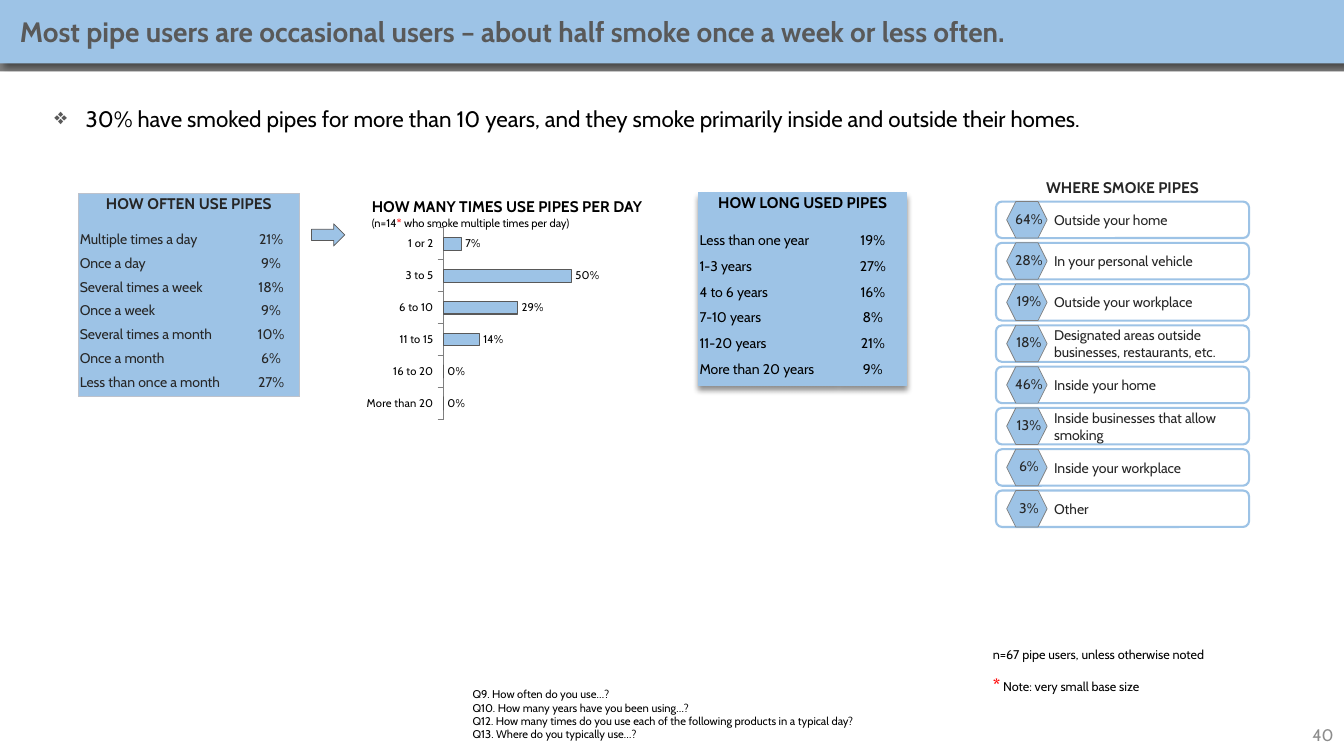
"""Build the slide on how often, how long and where pipe users smoke."""
import pptx
import pptx.chart.data
import pptx.dml.color
import pptx.enum.chart
import pptx.enum.shapes
import pptx.enum.text
import pptx.oxml
import pptx.oxml.ns
import pptx.util

Cm, Pt = pptx.util.Cm, pptx.util.Pt
RGBColor = pptx.dml.color.RGBColor
SHAPE = pptx.enum.shapes.MSO_SHAPE
ALIGN = pptx.enum.text.PP_ALIGN
ANCHOR = pptx.enum.text.MSO_ANCHOR

BLUE = RGBColor(0x9D, 0xC3, 0xE6)
BLACK = RGBColor(0, 0, 0)
WHITE = RGBColor(255, 255, 255)
RED = RGBColor(255, 0, 0)
INK = RGBColor(0x26, 0x26, 0x26)
SLATE = RGBColor(0x59, 0x59, 0x59)
GRAY = RGBColor(0x80, 0x80, 0x80)
LIGHT = RGBColor(0x8C, 0x8C, 0x8C)
AXIS = RGBColor(0x7F, 0x7F, 0x7F)
BORDER = RGBColor(0xBD, 0xC2, 0xCC)
NO_GRID = "{2D5ABB26-0587-4C30-8999-92F81FD0307C}"


def element(xml):
    tag, rest = xml[1:].split(">", 1)
    return pptx.oxml.parse_xml(f"<{tag} {pptx.oxml.ns.nsdecls('a', 'c')}>{rest}")


def shadow(angle):
    return element(
        '<a:effectLst><a:outerShdw blurRad="50800" dist="38100" '
        f'dir="{angle * 60000}" algn="t" rotWithShape="0"><a:srgbClr val="000000">'
        '<a:alpha val="43000"/></a:srgbClr></a:outerShdw></a:effectLst>')


class Deck:
    """Holds the font and the current slide and draws elements in cm."""

    def __init__(self, font):
        self.font = font
        self.prs = pptx.Presentation()
        self.prs.slide_width, self.prs.slide_height = Cm(33.87), Cm(19.05)
        self.s = self.prs.slides.add_slide(self.prs.slide_layouts[6])

    def fill_text(self, tf, paragraphs, size, color, bold=False, align=ALIGN.LEFT):
        for i, parts in enumerate(paragraphs):
            p = tf.paragraphs[0] if i == 0 else tf.add_paragraph()
            p.alignment = align
            if isinstance(parts, str):
                parts = [(parts, size, color, bold)]
            for text, run_size, run_color, run_bold in parts:
                r = p.add_run()
                r.text = text
                r.font.name, r.font.size = self.font, Pt(run_size)
                r.font.bold, r.font.color.rgb = run_bold, run_color

    def text(self, box, paragraphs, size, color=BLACK, bold=False,
             align=ALIGN.LEFT, anchor=ANCHOR.TOP):
        sp = self.s.shapes.add_textbox(*map(Cm, box))
        tf = sp.text_frame
        tf.word_wrap, tf.vertical_anchor = True, anchor
        self.fill_text(tf, paragraphs, size, color, bold, align)
        return sp

    def bullet(self, box, text, size):
        p = self.text(box, [text], size).text_frame.paragraphs[0]
        pPr = p._p.get_or_add_pPr()
        pPr.set("marL", str(Cm(0.79)))
        pPr.set("indent", str(Cm(-0.79)))
        pPr.append(element(f'<a:buClr><a:srgbClr val="{SLATE}"/></a:buClr>'))
        pPr.append(element('<a:buChar char="❖"></a:buChar>'))

    def shape(self, kind, box, fill, line=None, width=0.5):
        sp = self.s.shapes.add_shape(kind, *map(Cm, box))
        sp.shadow.inherit = False
        sp.fill.solid()
        sp.fill.fore_color.rgb = fill
        if line is None:
            sp.line.fill.background()
        else:
            sp.line.color.rgb, sp.line.width = line, Pt(width)
        return sp

    def table(self, left, top, widths, heights, title, rows, color, edge=None):
        head, body = heights
        table = self.s.shapes.add_table(
            len(rows) + 1, 2, Cm(left), Cm(top), Cm(sum(widths)),
            Cm(head + body * len(rows))).table
        table.first_row = table.horz_banding = False
        table._tbl.tblPr.find(pptx.oxml.ns.qn("a:tableStyleId")).text = NO_GRID
        for column, width in zip(table.columns, widths):
            column.width = Cm(width)
        for i, row in enumerate([(title, "")] + rows):
            table.rows[i].height = Cm(body if i else head)
            for j, value in enumerate(row):
                cell = table.cell(i, j)
                cell.margin_left = cell.margin_right = cell.margin_top = Cm(0.03)
                cell.margin_bottom = 0
                align = ALIGN.CENTER if j or not i else ALIGN.LEFT
                if value:
                    self.fill_text(cell.text_frame, [value], 10 if i else 11,
                                   color, not i, align)
                if edge is not None:
                    sides = {"L": j == 0, "R": j == 1 or i == 0,
                             "T": i == 0, "B": i == len(rows)}
                    for side in (k for k, on in sides.items() if on):
                        cell._tc.get_or_add_tcPr().append(element(
                            f'<a:ln{side} w="{Pt(0.5)}"><a:solidFill>'
                            f'<a:srgbClr val="{edge}"/></a:solidFill></a:ln{side}>'))
                cell.fill.solid()
                cell.fill.fore_color.rgb = BLUE
        table.cell(0, 0).merge(table.cell(0, 1))
        return table

    def bar_chart(self, box, categories, values):
        data = pptx.chart.data.CategoryChartData(number_format="0%")
        data.categories = categories
        data.add_series("Series 1", values)
        chart = self.s.shapes.add_chart(
            pptx.enum.chart.XL_CHART_TYPE.BAR_CLUSTERED, *map(Cm, box), data).chart
        chart.has_legend = chart.has_title = False
        chart.font.name, chart.font.size = self.font, Pt(8)
        chart.font.color.rgb = BLACK
        chart.category_axis.format.line.color.rgb = AXIS
        scale = chart.value_axis
        scale.visible = scale.has_major_gridlines = False
        scale.minimum_scale, scale.maximum_scale = 0, 0.6
        plot = chart.plots[0]
        plot.gap_width, plot.vary_by_categories = 150, False
        bars = plot.series[0].format
        bars.fill.solid()
        bars.fill.fore_color.rgb = BLUE
        bars.line.color.rgb, bars.line.width = SLATE, Pt(0.75)
        plot.has_data_labels = True
        labels = plot.data_labels
        labels.show_value, labels.font.size = True, Pt(8)
        labels.number_format, labels.number_format_is_linked = "0%", False
        labels.position = pptx.enum.chart.XL_LABEL_POSITION.OUTSIDE_END
        area = chart._chartSpace.chart.plotArea
        for old in area.findall(pptx.oxml.ns.qn("c:layout")):
            area.remove(old)
        sizes = "".join(f'<c:{k} val="{v}"/>' for k, v in
                        zip("xywh", (0.34, 0.02, 0.64, 0.96)))
        area.insert(0, element(
            '<c:layout><c:manualLayout><c:layoutTarget val="inner"/>'
            '<c:xMode val="edge"/><c:yMode val="edge"/>'
            f'{sizes}</c:manualLayout></c:layout>'))

    def place(self, top, percent, lines):
        sp = self.shape(SHAPE.ROUNDED_RECTANGLE, (25.1, top, 6.38, 0.92),
                        WHITE, BLUE, 1.5)
        tf = sp.text_frame
        tf.margin_left, tf.margin_right = Cm(1.42), 0
        tf.margin_top = tf.margin_bottom = 0
        tf.vertical_anchor = ANCHOR.MIDDLE
        self.fill_text(tf, lines, 10, INK)
        self.shape(SHAPE.HEXAGON, (25.37, top, 1.02, 0.92), BLUE, AXIS)
        self.text((25.32, top + 0.09, 1.22, 0.69), [percent], 10, INK,
                  align=ALIGN.CENTER)


def main():
    deck = Deck("Cabin")
    deck.shape(SHAPE.RECTANGLE, (0, 0, 33.87, 1.8), GRAY)
    band = deck.shape(SHAPE.RECTANGLE, (0, 0, 33.87, 1.6), BLUE)
    spPr = band._element.spPr
    spPr.replace(spPr.find(pptx.oxml.ns.qn("a:effectLst")), shadow(45))
    deck.text((0.25, 0.23, 26, 1.12),
              ["Most pipe users are occasional users – about half smoke once a "
               "week or less often."], 20, SLATE, True)
    deck.text((26.24, 18.01, 7.62, 1.02), ["40"], 12, LIGHT,
              align=ALIGN.RIGHT, anchor=ANCHOR.MIDDLE)
    deck.bullet((1.12, 2.53, 32.16, 0.94),
                "30% have smoked pipes for more than 10 years, and they smoke "
                "primarily inside and outside their homes.", 16)

    deck.table(1.98, 4.88, (4.14, 1.42), (0.91, 0.6), "HOW OFTEN USE PIPES", [
        ("Multiple times a day", "21%"), ("Once a day", "9%"),
        ("Several times a week", "18%"), ("Once a week", "9%"),
        ("Several times a month", "10%"), ("Once a month", "6%"),
        ("Less than once a month", "27%")], INK, BORDER)
    years = deck.table(17.6, 4.85, (3.53, 1.73), (0.97, 0.65),
                       "HOW LONG USED PIPES", [
        ("Less than one year", "19%"), ("1-3 years", "27%"),
        ("4 to 6 years", "16%"), ("7-10 years", "8%"),
        ("11-20 years", "21%"), ("More than 20 years", "9%")], BLACK)
    years._tbl.tblPr.insert(0, shadow(90))

    deck.shape(SHAPE.RIGHT_ARROW, (7.85, 5.64, 0.84, 0.56), BLUE, SLATE)
    deck.bar_chart((9.12, 5.64, 6.05, 5.03),
                   ["More than 20", "16 to 20", "11 to 15", "6 to 10", "3 to 5",
                    "1 or 2"], [0, 0, 0.14, 0.29, 0.5, 0.07])
    deck.text((9.12, 4.85, 7.42, 1.07), [
        [("HOW MANY TIMES USE PIPES PER DAY", 11, BLACK, True)],
        [("(n=14", 8, BLACK, False), ("*", 8, RED, True),
         (" who smoke multiple times per day)", 8, BLACK, False)]], 8)

    deck.text((25.1, 4.37, 6.38, 0.74), ["WHERE SMOKE PIPES"], 11, INK, True,
              ALIGN.CENTER)
    places = [
        ("64%", ["Outside your home"]), ("28%", ["In your personal vehicle"]),
        ("19%", ["Outside your workplace"]),
        ("18%", ["Designated areas outside", "businesses, restaurants, etc."]),
        ("46%", ["Inside your home"]),
        ("13%", ["Inside businesses that allow", "smoking"]),
        ("6%", ["Inside your workplace"]), ("3%", ["Other"])]
    for i, (percent, lines) in enumerate(places):
        deck.place(5.08 + 1.04 * i, percent, lines)

    deck.text((11.66, 17.2, 10.69, 1.63), [
        "Q9. How often do you use…?", "Q10. How many years have you been using…?",
        "Q12. How many times do you use each of the following products in a "
        "typical day?", "Q13. Where do you typically use…?"], 8)
    deck.text((24.77, 16.18, 7.9, 0.64),
              ["n=67 pipe users, unless otherwise noted"], 9)
    deck.text((24.77, 16.89, 6.38, 0.76), [
        [("*", 12, RED, True), (" Note: very small base size", 9, BLACK, False)]], 9)
    deck.prs.save("out.pptx")


if __name__ == "__main__":
    main()
